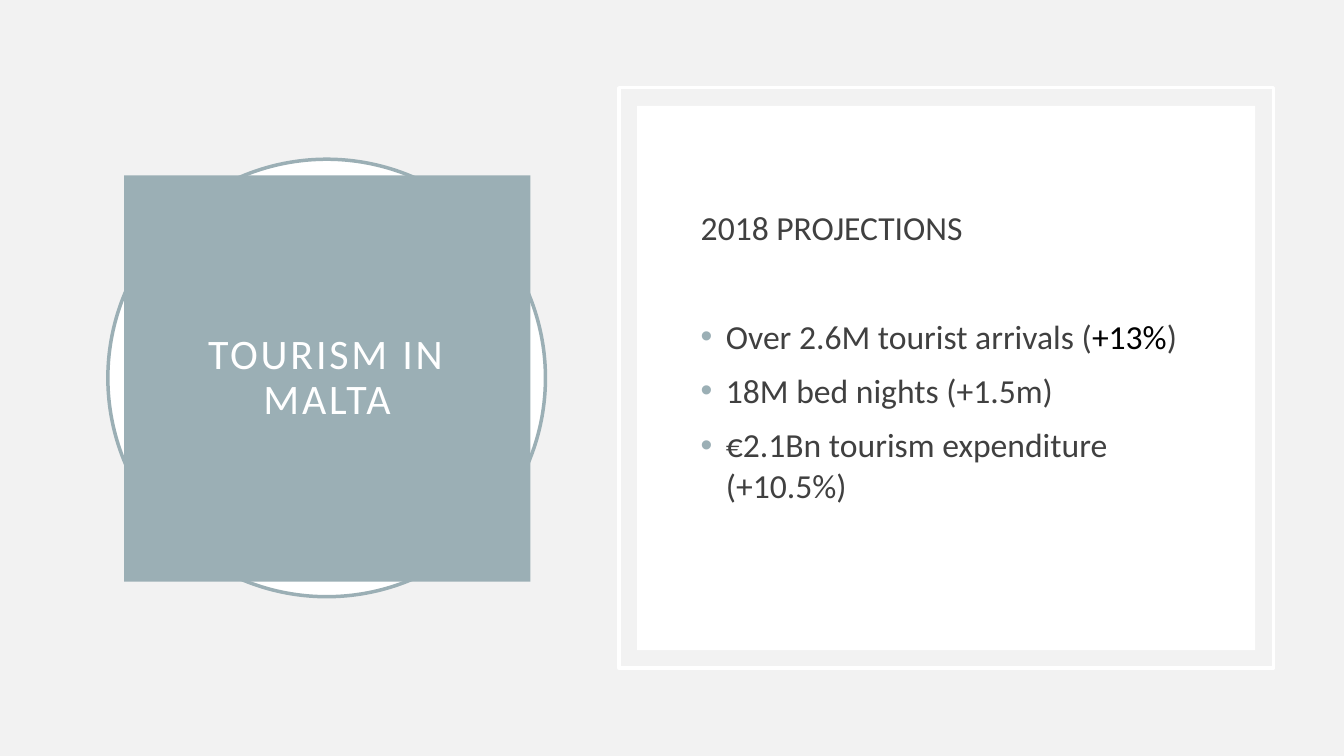
import dataclasses
import typing

import lxml.etree
import pptx
import pptx.dml.color
import pptx.enum.shapes
import pptx.enum.text
import pptx.oxml.ns
import pptx.util

Inches = pptx.util.Inches
Pt = pptx.util.Pt
RGBColor = pptx.dml.color.RGBColor
Shapes = pptx.enum.shapes.MSO_SHAPE
Anchor = pptx.enum.text.MSO_ANCHOR
AutoSize = pptx.enum.text.MSO_AUTO_SIZE

PALE_GREY = RGBColor(0xF2, 0xF2, 0xF2)
WHITE = RGBColor(0xFF, 0xFF, 0xFF)
BLUE_GREY = RGBColor(0x9B, 0xAF, 0xB5)
DARK_GREY = RGBColor(0x40, 0x40, 0x40)
BLACK = RGBColor(0x00, 0x00, 0x00)

FONT = "Calibri"


@dataclasses.dataclass(frozen=True)
class Box:
    left: float
    top: float
    width: float
    height: float

    def as_lengths(self) -> dict[str, int]:
        return {name: Inches(value) for name, value in dataclasses.asdict(self).items()}


@dataclasses.dataclass(frozen=True)
class Backdrop:
    kind: Shapes
    box: Box
    fill: RGBColor | None = None
    line: RGBColor | None = None


@dataclasses.dataclass(frozen=True)
class Entry:
    runs: tuple[tuple[str, RGBColor], ...]
    space_before: float = 10
    bulleted: bool = True


TITLE_BOX = Box(1.23, 1.74, 4.03, 4.03)
BODY_BOX = Box(6.85, 1.58, 5.09, 4.34)
TITLE_CIRCLE = Backdrop(Shapes.OVAL, Box(1.07, 1.58, 4.34, 4.34), WHITE, BLUE_GREY)
BODY_PANELS = (
    Backdrop(Shapes.RECTANGLE, Box(6.14, 0.87, 6.49, 5.76), line=WHITE),
    Backdrop(Shapes.RECTANGLE, Box(6.32, 1.05, 6.13, 5.4), fill=WHITE),
)
ENTRIES = (
    Entry((("2018 PROJECTIONS", DARK_GREY),), bulleted=False),
    Entry(
        (("Over 2.6M tourist arrivals (", DARK_GREY), ("+13%", BLACK), (")", DARK_GREY)),
        space_before=49,
    ),
    Entry((("18M bed nights (+1.5m)", DARK_GREY),)),
    Entry((("€2.1Bn tourism expenditure (+10.5%)", DARK_GREY),)),
)


def apply_format(target: typing.Any, values: dict[str, typing.Any]) -> None:
    for name, value in values.items():
        setattr(target, name, value)


def add_run(paragraph: typing.Any, text: str, size: float, color: RGBColor) -> typing.Any:
    run = paragraph.add_run()
    run.text = text
    apply_format(run.font, {"name": FONT, "size": Pt(size), "bold": False})
    run.font.color.rgb = color
    return run


def add_backdrop(slide: typing.Any, backdrop: Backdrop, front: typing.Any) -> None:
    """Draw a backdrop directly behind the front shape."""
    shape = slide.shapes.add_shape(backdrop.kind, **backdrop.box.as_lengths())
    shape.shadow.inherit = False
    if backdrop.fill is None:
        shape.fill.background()
    else:
        shape.fill.solid()
        shape.fill.fore_color.rgb = backdrop.fill
    if backdrop.line is None:
        shape.line.fill.background()
    else:
        shape.line.color.rgb = backdrop.line
        shape.line.width = Pt(2.5)
    front._element.addprevious(shape._element)


def set_bullet(paragraph: typing.Any, bulleted: bool) -> None:
    qn = pptx.oxml.ns.qn
    properties = paragraph._p.get_or_add_pPr()
    indent = Inches(0.25) if bulleted else 0
    properties.set("marL", str(indent))
    properties.set("indent", str(-indent))
    if not bulleted:
        lxml.etree.SubElement(properties, qn("a:buNone"))
        return
    color = lxml.etree.SubElement(properties, qn("a:buClr"))
    lxml.etree.SubElement(color, qn("a:srgbClr")).set("val", str(BLUE_GREY))
    lxml.etree.SubElement(properties, qn("a:buChar")).set("char", "•")


def fill_title(title: typing.Any) -> None:
    apply_format(title, TITLE_BOX.as_lengths())
    title.fill.solid()
    title.fill.fore_color.rgb = BLUE_GREY
    margins = {f"margin_{side}": Inches(0.2) for side in ("left", "top", "right", "bottom")}
    frame_format = {"word_wrap": True, "auto_size": AutoSize.NONE, "vertical_anchor": Anchor.MIDDLE}
    apply_format(title.text_frame, frame_format | margins)
    paragraph = title.text_frame.paragraphs[0]
    apply_format(paragraph, {"alignment": pptx.enum.text.PP_ALIGN.CENTER, "line_spacing": 0.9})
    run = add_run(paragraph, "TOURISM IN MALTA", 30, WHITE)
    run.font._element.set("spc", "200")


def fill_body(body: typing.Any) -> None:
    apply_format(body, BODY_BOX.as_lengths())
    frame = body.text_frame
    apply_format(frame, {
        "word_wrap": True,
        "auto_size": AutoSize.NONE,
        "vertical_anchor": Anchor.MIDDLE,
        "margin_bottom": Inches(0.49),
    })
    for index, entry in enumerate(ENTRIES):
        paragraph = frame.add_paragraph() if index else frame.paragraphs[0]
        apply_format(paragraph, {"space_before": Pt(entry.space_before), "line_spacing": 1.0})
        set_bullet(paragraph, entry.bulleted)
        for text, color in entry.runs:
            add_run(paragraph, text, 24, color)


def main() -> None:
    presentation = pptx.Presentation()
    apply_format(presentation, {"slide_width": Inches(13.33), "slide_height": Inches(7.5)})
    slide = presentation.slides.add_slide(presentation.slide_layouts[1])
    slide.background.fill.solid()
    slide.background.fill.fore_color.rgb = PALE_GREY

    title, body = slide.placeholders
    fill_title(title)
    fill_body(body)
    add_backdrop(slide, TITLE_CIRCLE, title)
    for panel in BODY_PANELS:
        add_backdrop(slide, panel, body)
    presentation.save("out.pptx")


if __name__ == "__main__":
    main()
